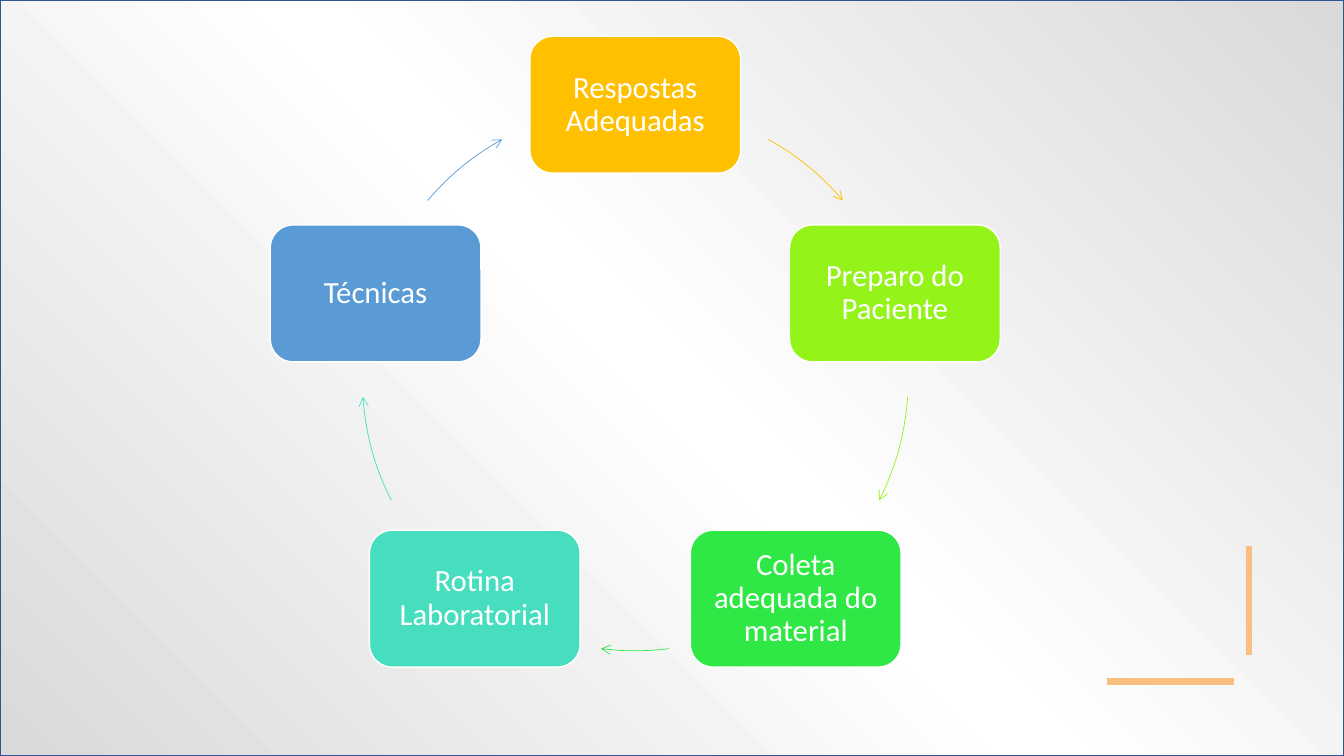
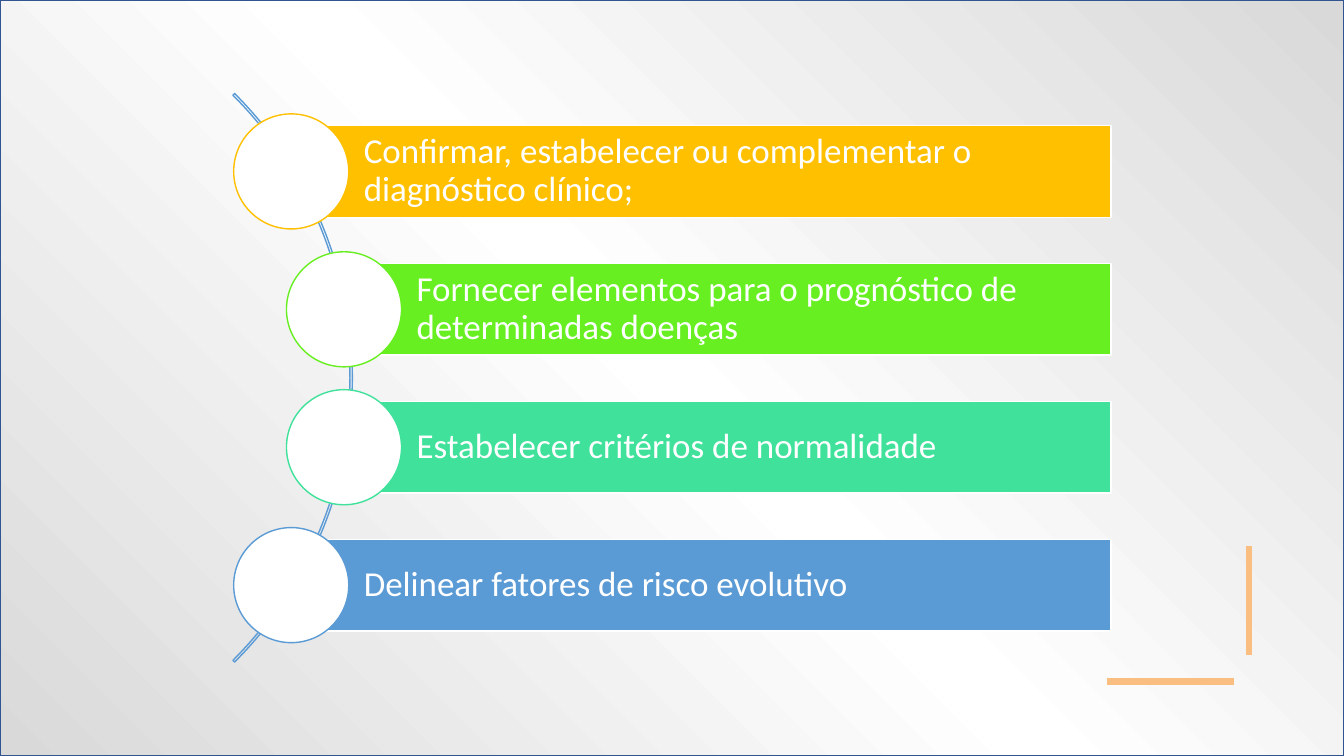
"""Build two slides: a five-step cycle and a curved list of four goals."""
from copy import deepcopy
from dataclasses import dataclass
from math import cos, radians, sin
from typing import Any

from lxml import etree
from pptx import Presentation
from pptx.dml.color import RGBColor
from pptx.enum.shapes import MSO_CONNECTOR, MSO_SHAPE
from pptx.enum.text import MSO_ANCHOR, PP_ALIGN
from pptx.oxml.ns import qn
from pptx.shapes.autoshape import Shape
from pptx.slide import Slide
from pptx.util import Cm, Pt

RECTANGLE = MSO_SHAPE.RECTANGLE
ROUNDED = MSO_SHAPE.ROUNDED_RECTANGLE
OVAL = MSO_SHAPE.OVAL
ARC = MSO_SHAPE.ARC
BLOCK_ARC = MSO_SHAPE.BLOCK_ARC
STRAIGHT = MSO_CONNECTOR.STRAIGHT
MIDDLE = MSO_ANCHOR.MIDDLE
LEFT, CENTER = PP_ALIGN.LEFT, PP_ALIGN.CENTER

WHITE = RGBColor(0xFF, 0xFF, 0xFF)
SILVER = RGBColor(0xD9, 0xD9, 0xD9)
NAVY = RGBColor(0x32, 0x54, 0x91)
PEACH = RGBColor(0xFA, 0xBE, 0x80)
GOLD = RGBColor(0xFF, 0xC0, 0x00)
LIME = RGBColor(0x94, 0xF3, 0x19)
GREEN = RGBColor(0x30, 0xE8, 0x45)
TURQUOISE = RGBColor(0x46, 0xDE, 0xBF)
BLUE = RGBColor(0x5B, 0x9B, 0xD5)
BRIGHT_GREEN = RGBColor(0x67, 0xEF, 0x21)
MINT = RGBColor(0x3F, 0xE1, 0x9B)

FONT = "Calibri"
SLIDE_WIDTH, SLIDE_HEIGHT = 33.87, 19.05
MIDDLE_Y = 9.52
ANGLE_UNIT = 0.6
GRADIENT = ((0, SILVER), (0.5, WHITE), (1, SILVER))
ACCENT_LINES = ((27.89, 17.17, 31.09, 17.17), (31.47, 13.77, 31.47, 16.51))

CYCLE_X, CYCLE_RADIUS = 16.01, 6.88
STEP_WIDTH, STEP_HEIGHT = 5.31, 3.45

CURVE_X, CURVE_RADIUS = -1.25, 10.13
BAR_RIGHT, BAR_HEIGHT = 28.0, 2.31
FIRST_BAR_Y, BAR_PITCH = 4.32, 3.475
CIRCLE_SIZE = 2.9


@dataclass(frozen=True)
class Step:
    """A box of the cycle and the arc that leaves it, in degrees from the top."""

    text: str
    color: RGBColor
    arc_start: float
    arc_end: float


@dataclass(frozen=True)
class Goal:
    """A bar of the list and the centre of its circle."""

    text: str
    color: RGBColor
    center_x: float


@dataclass(frozen=True)
class TextStyle:
    """Size, alignment and margins of the text in a shape."""

    size: float
    alignment: Any
    left_margin: float
    margin: float


STEP_STYLE = TextStyle(22, CENTER, 0.41, 0.41)
GOAL_STYLE = TextStyle(25, LEFT, 1.83, 0.18)

STEPS = (
    Step("Respostas Adequadas", GOLD, 29.2, 49.5),
    Step("Preparo do Paciente", LIME, 94, 116.7),
    Step("Coleta adequada do material", GREEN, 172.8, 187.2),
    Step("Rotina Laboratorial", TURQUOISE, 243.3, 266),
    Step("Técnicas", BLUE, 310.5, 330.8),
)
GOALS = (
    Goal("Confirmar, estabelecer ou complementar o diagnóstico clínico;", GOLD, 7.34),
    Goal("Fornecer elementos para o prognóstico de determinadas doenças", BRIGHT_GREEN, 8.67),
    Goal("Estabelecer critérios de normalidade", MINT, 8.67),
    Goal("Delinear fatores de risco evolutivo", BLUE, 7.34),
)


def apply_format(target: Any, values: dict[str, Any]) -> None:
    """Set each named attribute on the target."""
    for name, value in values.items():
        setattr(target, name, value)


def add_centered(slide: Slide, kind: Any, x: float, y: float, width: float, height: float,
                 fill: RGBColor | None, line: RGBColor, line_width: float = 1) -> Shape:
    """Add a preset shape around a centre point given in centimetres."""
    shape = slide.shapes.add_shape(kind, Cm(x - width / 2), Cm(y - height / 2), Cm(width), Cm(height))
    shape.shadow.inherit = False
    if fill is None:
        shape.fill.background()
    else:
        shape.fill.solid()
        shape.fill.fore_color.rgb = fill
    shape.line.color.rgb = line
    shape.line.width = Pt(line_width)
    return shape


def write_text(shape: Shape, text: str, style: TextStyle) -> None:
    """Write white text into a shape."""
    margin = Cm(style.margin)
    apply_format(shape.text_frame, {
        "word_wrap": True, "vertical_anchor": MIDDLE, "margin_left": Cm(style.left_margin),
        "margin_right": margin, "margin_top": margin, "margin_bottom": margin,
    })
    paragraph = shape.text_frame.paragraphs[0]
    paragraph.text = text
    apply_format(paragraph, {"alignment": style.alignment, "line_spacing": 0.9})
    apply_format(paragraph.font, {"name": FONT, "size": Pt(style.size)})
    paragraph.font.color.rgb = WHITE


def add_backdrop(slide: Slide) -> None:
    """Draw the gradient backdrop and the accent lines."""
    backdrop = add_centered(slide, RECTANGLE, SLIDE_WIDTH / 2, SLIDE_HEIGHT / 2,
                            SLIDE_WIDTH, SLIDE_HEIGHT, WHITE, NAVY)
    backdrop.fill.gradient()
    backdrop.fill.gradient_angle = 45
    stop_list = backdrop.element.spPr.find(".//" + qn("a:gsLst"))
    stop_list.insert(1, deepcopy(stop_list[0]))
    for stop, (position, color) in zip(backdrop.fill.gradient_stops, GRADIENT):
        stop.position = position
        stop.color.rgb = color
    for ends in ACCENT_LINES:
        connector = slide.shapes.add_connector(STRAIGHT, *(Cm(end) for end in ends))
        connector.line.color.rgb = PEACH
        connector.line.width = Pt(4.5)
        etree.SubElement(connector.element.spPr, qn("a:effectLst"))


def add_step(slide: Slide, step: Step, angle: float) -> None:
    """Draw a box of the cycle and the arrow to the next one."""
    box = add_centered(slide, ROUNDED, CYCLE_X + CYCLE_RADIUS * sin(radians(angle)),
                       MIDDLE_Y - CYCLE_RADIUS * cos(radians(angle)),
                       STEP_WIDTH, STEP_HEIGHT, step.color, WHITE)
    write_text(box, step.text, STEP_STYLE)
    arrow = add_centered(slide, ARC, CYCLE_X, MIDDLE_Y, 2 * CYCLE_RADIUS, 2 * CYCLE_RADIUS,
                         None, step.color, 0.5)
    for index, turn in enumerate((step.arc_start, step.arc_end)):
        arrow.adjustments[index] = (turn - 90) % 360 * ANGLE_UNIT
    etree.SubElement(arrow.element.spPr.find(qn("a:ln")), qn("a:tailEnd"), type="arrow")


def add_goal(slide: Slide, goal: Goal, y: float) -> None:
    """Draw a bar of the list with its circle."""
    bar = add_centered(slide, RECTANGLE, (goal.center_x + BAR_RIGHT) / 2, y,
                       BAR_RIGHT - goal.center_x, BAR_HEIGHT, goal.color, WHITE)
    write_text(bar, goal.text, GOAL_STYLE)
    add_centered(slide, OVAL, goal.center_x, y, CIRCLE_SIZE, CIRCLE_SIZE, WHITE, goal.color)


def add_cycle(slide: Slide) -> None:
    """Place the steps evenly around the cycle."""
    for index, step in enumerate(STEPS):
        add_step(slide, step, index * 360 / len(STEPS))


def add_goals(slide: Slide) -> None:
    """Draw the curve and the goals along it."""
    curve = add_centered(slide, BLOCK_ARC, CURVE_X, MIDDLE_Y, 2 * CURVE_RADIUS, 2 * CURVE_RADIUS,
                         None, BLUE)
    for index, value in enumerate((315 * ANGLE_UNIT, 45 * ANGLE_UNIT, 0.003)):
        curve.adjustments[index] = value
    for index, goal in enumerate(GOALS):
        add_goal(slide, goal, FIRST_BAR_Y + index * BAR_PITCH)


def main() -> None:
    """Build and save the presentation."""
    presentation = Presentation()
    presentation.slide_width = Cm(SLIDE_WIDTH)
    presentation.slide_height = Cm(SLIDE_HEIGHT)
    for add_content in (add_cycle, add_goals):
        slide = presentation.slides.add_slide(presentation.slide_layouts[6])
        add_backdrop(slide)
        add_content(slide)
    presentation.save("out.pptx")


if __name__ == "__main__":
    main()
